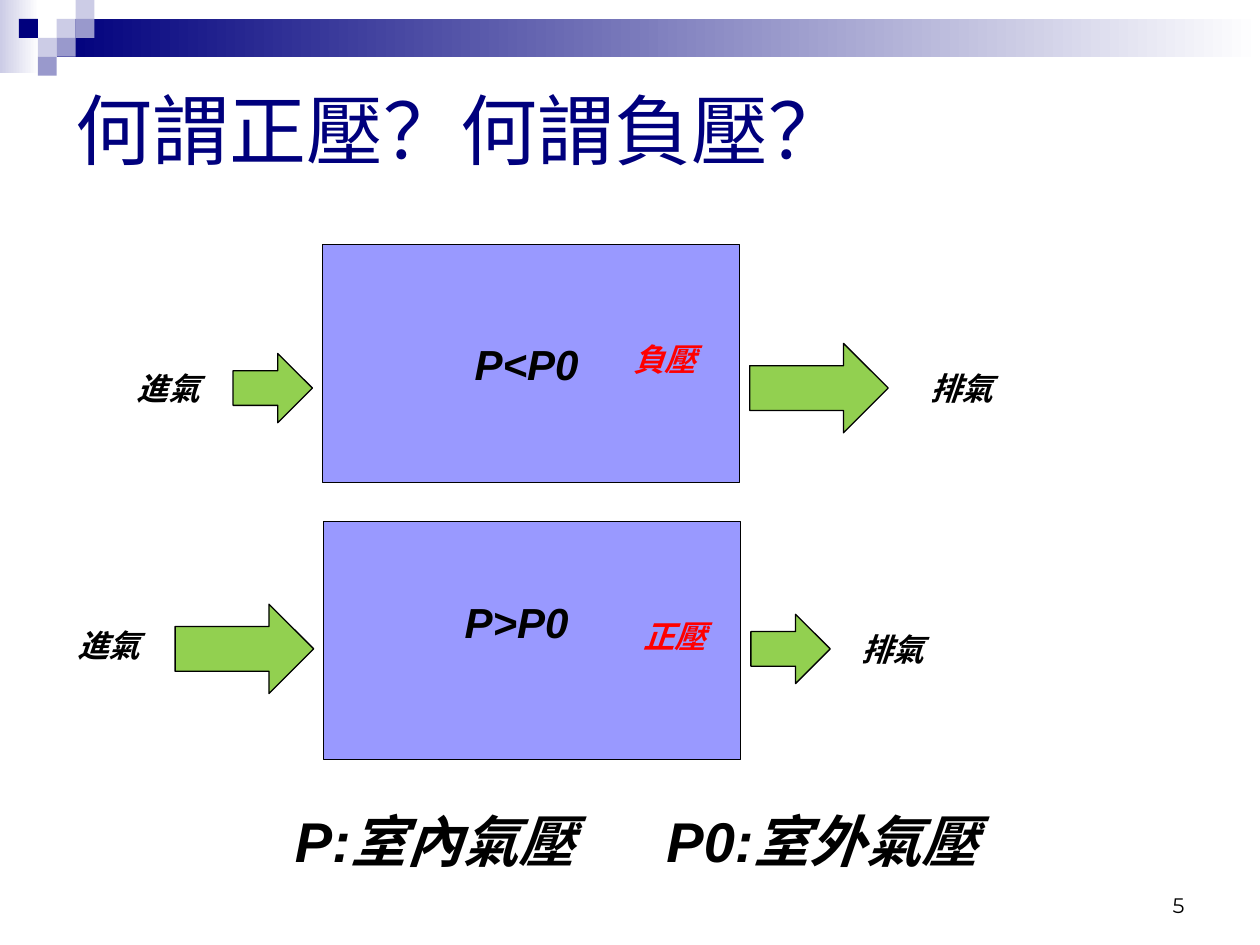
"""Build the slide that compares negative and positive room pressure."""
from lxml import etree
from pptx import Presentation, util as u
from pptx.dml.color import RGBColor
from pptx.enum import shapes, text
from pptx.oxml.ns import qn

NAVY = RGBColor(0x00, 0x00, 0x7D)
LILAC = RGBColor(0xCC, 0xCC, 0xE6)
MAUVE = RGBColor(0x99, 0x99, 0xCC)
ROOM = RGBColor(0x99, 0x99, 0xFF)
GREEN = RGBColor(0x92, 0xD0, 0x50)
RED = RGBColor(0xFF, 0x00, 0x00)
BLACK = RGBColor(0x00, 0x00, 0x00)
WHITE = RGBColor(0xFF, 0xFF, 0xFF)

TITLE = "何謂正壓？何謂負壓？"
LEGEND = "P:室內氣壓\tP0:室外氣壓"
PAGE = "5"
TILE = 0.15
TILES = [(3, 1, LILAC), (4, 0, LILAC), (4, 1, MAUVE), (2, 2, LILAC),
         (1, 1, NAVY), (3, 2, MAUVE), (2, 3, MAUVE)]
BANDS = [((0, 0, 0.31, 0.58), LILAC), ((0.45, 0.15, 9.55, 0.3), NAVY)]

ROOM_SIZE = (3.31, 1.89)
SMALL, LARGE = (0.63, 0.55), (1.1, 0.71)
GAP = 0.08
CASES = [
    {"room": (2.56, 1.94), "flow": 3.08, "intake": SMALL, "exhaust": LARGE,
     "formula": ("P<P0", 3.43, 2.49), "state": ("負壓", 4.92, 2.65),
     "labels": [("進氣", 0.9, 2.88), ("排氣", 7.2, 2.88)]},
    {"room": (2.57, 4.14), "flow": 5.15, "intake": LARGE, "exhaust": SMALL,
     "formula": ("P>P0", 3.35, 4.54), "state": ("正壓", 5, 4.85),
     "labels": [("進氣", 0.43, 4.92), ("排氣", 6.65, 4.95)]},
]

deck = Presentation()
deck.slide_width, deck.slide_height = u.Inches(10), u.Inches(7.5)
slide = deck.slides.add_slide(deck.slide_layouts[6])


def block(box, fill, outlined=False, kind=shapes.MSO_SHAPE.RECTANGLE):
    part = slide.shapes.add_shape(kind, *map(u.Inches, box))
    part.shadow.inherit = False
    part.fill.solid()
    part.fill.fore_color.rgb = fill
    if outlined:
        part.line.color.rgb = BLACK
        part.line.width = u.Pt(0.75)
    else:
        part.line.fill.background()
    return part


def band(box, start):
    part = block(box, start)
    part.fill.gradient()
    part.fill.gradient_angle = 0
    for stop, color, place in zip(part.fill.gradient_stops, (start, WHITE), (0, 1)):
        stop.color.rgb = color
        stop.position = place


def write(words, box, size, fill=None, color=BLACK, strong=True, font="Arial",
          align=text.PP_ALIGN.CENTER, anchor=text.MSO_ANCHOR.TOP, wrap=True, tab=None):
    holder = block(box, fill) if fill else slide.shapes.add_textbox(*map(u.Inches, box))
    frame = holder.text_frame
    frame.word_wrap, frame.vertical_anchor = wrap, anchor
    line = frame.paragraphs[0]
    line.text, line.alignment = words, align
    if tab:
        stops = etree.SubElement(line._p.get_or_add_pPr(), qn("a:tabLst"))
        etree.SubElement(stops, qn("a:tab"), pos=str(u.Inches(tab)), algn="l")
    looks = {"name": font, "size": u.Pt(size), "bold": strong, "italic": strong}
    for run in line.runs:
        for key, value in looks.items():
            setattr(run.font, key, value)
        run.font.color.rgb = color
    return frame


for box, start in BANDS:
    band(box, start)
for column, row, color in TILES:
    block((column * TILE, row * TILE, TILE, TILE), color)

write(PAGE, (7.17, 6.83, 2.33, 0.5), 12, strong=False, font="Montserrat",
      align=text.PP_ALIGN.RIGHT, anchor=text.MSO_ANCHOR.BOTTOM)
write(TITLE, (0.5, 0.5, 9, 1.05), 44, color=NAVY, strong=False,
      align=text.PP_ALIGN.LEFT, anchor=text.MSO_ANCHOR.MIDDLE)

for case in CASES:
    left, top = case["room"]
    block((left, top, *ROOM_SIZE), ROOM, outlined=True)
    intake, exhaust = case["intake"], case["exhaust"]
    for start, (width, height) in ((left - GAP - intake[0], intake),
                                   (left + ROOM_SIZE[0] + GAP, exhaust)):
        block((start, case["flow"] - height / 2, width, height), GREEN,
              outlined=True, kind=shapes.MSO_SHAPE.RIGHT_ARROW)
    state, *corner = case["state"]
    write(state, (*corner, 0.71, 0.47), 18, fill=ROOM, color=RED)
    for label, *corner in case["labels"]:
        write(label, (*corner, 0.87, 0.47), 18)
    formula, *corner = case["formula"]
    write(formula, (*corner, 1.5, 0.79), 24, fill=ROOM,
          anchor=text.MSO_ANCHOR.MIDDLE, wrap=False)

legend = write(LEGEND, (1.38, 6.35, 6.77, 0.55), 32, align=text.PP_ALIGN.LEFT, tab=2.95)
legend.margin_left = u.Inches(0.96)

deck.save("out.pptx")
